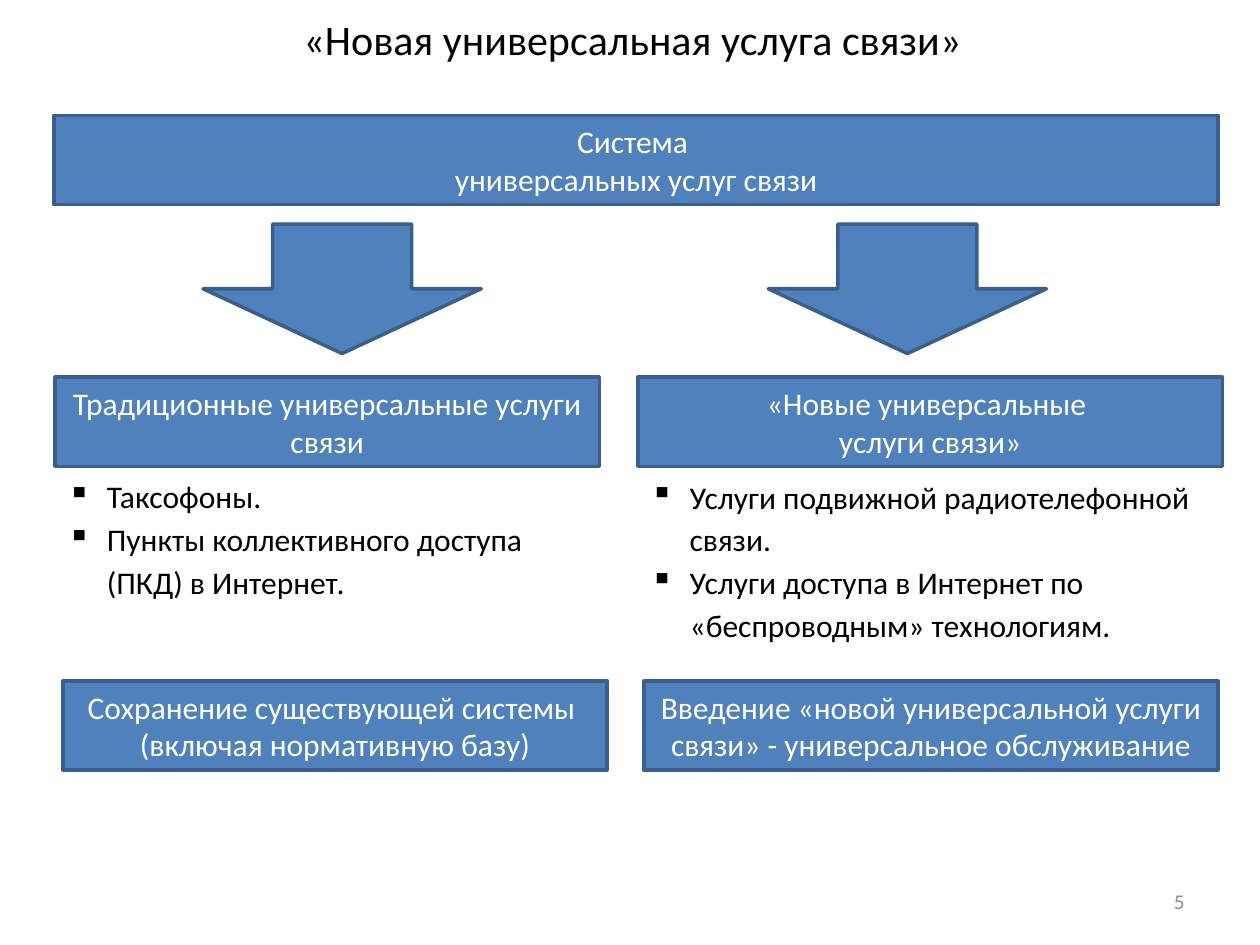
from dataclasses import dataclass

from lxml import etree
from pptx import Presentation
from pptx import util as u
from pptx.dml.color import RGBColor as Rgb
from pptx.enum import shapes, text
from pptx.oxml import ns

Pt = u.Pt
Kind = shapes.MSO_SHAPE
Align = text.PP_ALIGN
Anchor = text.MSO_ANCHOR


@dataclass(frozen=True)
class Theme:
    font: str = "Calibri"
    fill: Rgb = Rgb(0x4F, 0x81, 0xBD)
    edge: Rgb = Rgb(0x3A, 0x5F, 0x8C)
    ink: Rgb = Rgb(0, 0, 0)
    pale: Rgb = Rgb(255, 255, 255)
    gray: Rgb = Rgb(0x8C, 0x8C, 0x8C)
    head: int = 24
    body: int = 18
    note: int = 12


LOOK = Theme()


def write(frame, lines, size, color, align):
    frame.word_wrap = True
    for i, line in enumerate(lines):
        para = frame.paragraphs[0] if i == 0 else frame.add_paragraph()
        para.alignment = align
        run = para.add_run()
        run.text = line
        run.font.name = LOOK.font
        run.font.size = Pt(size)
        run.font.color.rgb = color


def block(slide, kind, area, lines=()):
    shape = slide.shapes.add_shape(kind, *map(Pt, area))
    shape.shadow.inherit = False
    shape.fill.solid()
    shape.fill.fore_color.rgb = LOOK.fill
    shape.line.color.rgb = LOOK.edge
    shape.line.width = Pt(2)
    shape.text_frame.vertical_anchor = Anchor.MIDDLE
    write(shape.text_frame, lines, LOOK.body, LOOK.pale, Align.CENTER)


def label(slide, area, lines, size, color, align, anchor=Anchor.MIDDLE):
    frame = slide.shapes.add_textbox(*map(Pt, area)).text_frame
    frame.vertical_anchor = anchor
    write(frame, lines, size, color, align)
    return frame


def bullets(slide, area, lines):
    frame = label(slide, area, lines, LOOK.body, LOOK.ink, Align.LEFT, Anchor.TOP)
    for para in frame.paragraphs:
        para.line_spacing = 1.13
        props = para._p.get_or_add_pPr()
        props.set("marL", str(Pt(22.5)))
        props.set("indent", str(Pt(-22.5)))
        etree.SubElement(props, ns.qn("a:buChar")).set("char", "▪")


def main():
    """Build the slide about the new universal communication service."""
    deck = Presentation()
    deck.slide_width, deck.slide_height = Pt(720), Pt(540)
    slide = deck.slides.add_slide(deck.slide_layouts[6])
    tall = 51

    label(slide, (28, 6, 667, 32), ["«Новая универсальная услуга связи»"],
          LOOK.head, LOOK.ink, Align.CENTER)
    block(slide, Kind.RECTANGLE, (31, 66, 665, tall),
          ["Система ", "универсальных услуг связи"])

    sides = [
        (31.5, 311, ["Традиционные универсальные услуги связи"],
         ["Таксофоны.", "Пункты коллективного доступа (ПКД) в Интернет."], 81),
        (364.5, 334, ["«Новые универсальные ", "услуги связи»"],
         ["Услуги подвижной радиотелефонной связи.",
          "Услуги доступа в Интернет по «беспроводным» технологиям."], 106),
    ]
    for left, wide, name, items, high in sides:
        block(slide, Kind.RECTANGLE, (left, 215.5, wide, tall), name)
        bullets(slide, (left, 266.5, wide, high), items)

    goals = [
        (36, 311, ["Сохранение существующей системы ", "(включая нормативную базу)"]),
        (368, 328, ["Введение «новой универсальной услуги связи» - "
                    "универсальное обслуживание"]),
    ]
    for left, wide, lines in goals:
        block(slide, Kind.RECTANGLE, (left, 389, wide, tall), lines)

    for left in (116, 439):
        block(slide, Kind.DOWN_ARROW, (left, 128, 159, 74))

    label(slide, (516, 500.5, 168, 29), ["5"], LOOK.note, LOOK.gray, Align.RIGHT)
    deck.save("out.pptx")


if __name__ == "__main__":
    main()
